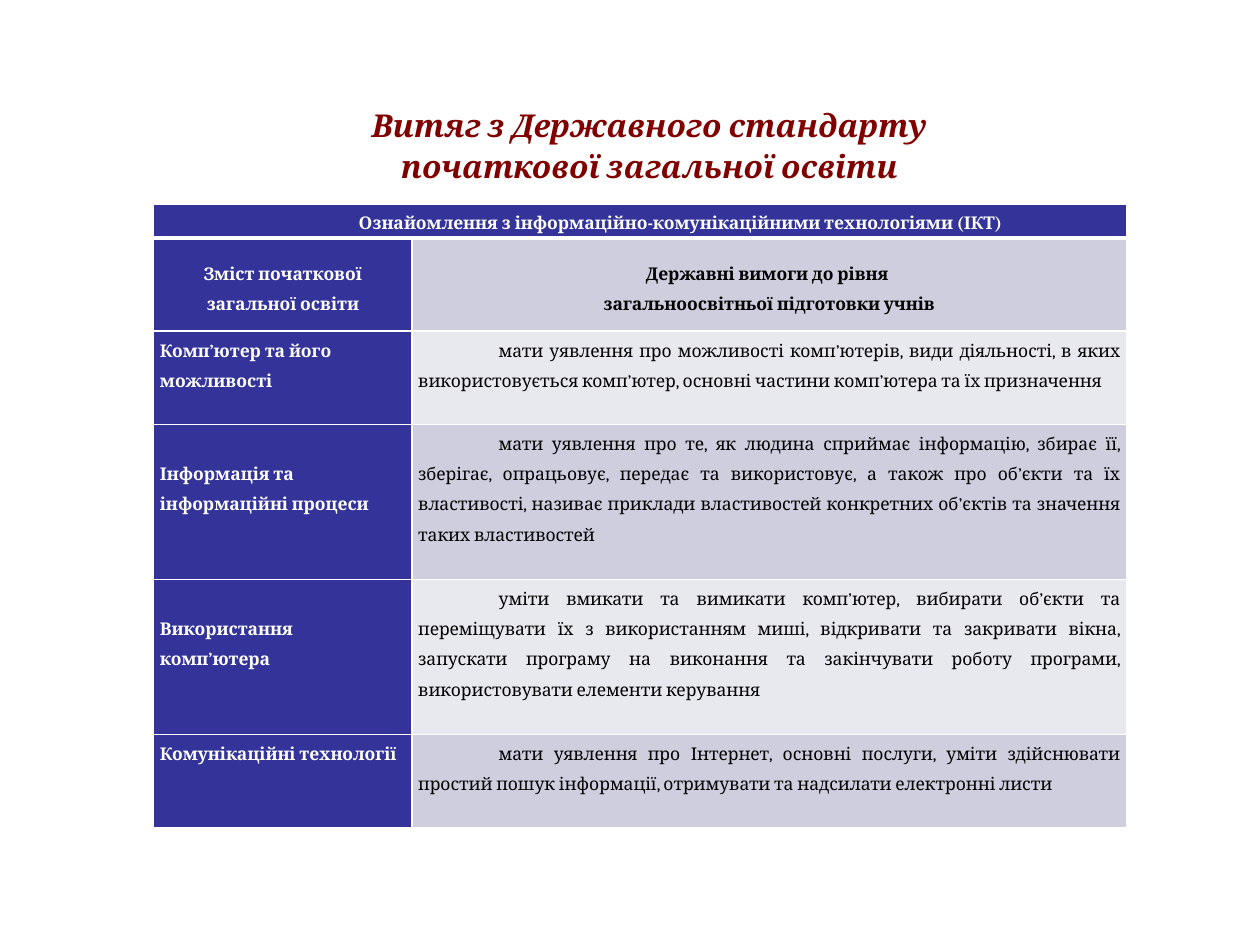
from pptx import Presentation
from pptx.dml.color import RGBColor as RGB
from pptx.enum.text import MSO_ANCHOR as ANCHOR, PP_ALIGN as ALIGN
from pptx.oxml import parse_xml
from pptx.oxml.ns import nsdecls
from pptx.util import Pt

TITLE = "Витяг з Державного стандарту початкової загальної освіти"
BANNER = "Ознайомлення з інформаційно-комунікаційними технологіями (ІКТ)"
HEADINGS = ("Зміст початкової загальної освіти",
            "Державні вимоги до рівня \vзагальноосвітньої підготовки учнів")
# topic, requirement, lines the topic is lowered by
TOPICS = [
    ("Комп’ютер та його можливості",
     "мати уявлення про можливості комп’ютерів, види діяльності, в яких "
     "використовується комп’ютер, основні частини комп’ютера та їх призначення", 0),
    ("Інформація та інформаційні процеси",
     "мати уявлення про те, як людина сприймає інформацію, збирає її, зберігає, "
     "опрацьовує, передає та використовує, а також про об’єкти та їх властивості, "
     "називає приклади властивостей конкретних об’єктів та значення таких властивостей", 1),
    ("Використання комп’ютера",
     "уміти вмикати та вимикати комп’ютер, вибирати об’єкти та переміщувати їх з "
     "використанням миші, відкривати та закривати вікна, запускати програму на "
     "виконання та закінчувати роботу програми, використовувати елементи керування", 1),
    ("Комунікаційні технології",
     "мати уявлення про Інтернет, основні послуги, уміти здійснювати простий пошук "
     "інформації, отримувати та надсилати електронні листи", 0),
]

THEME = dict(font="Cambria", title_size=18, body_size=10, title="800000",
             head="333399", bands=("CECEDE", "E8E8EF"), light="FFFFFF", dark="000000")

TITLE_BOX = (172.8, 54.7, 396.7, 55.4)
TABLE_LEFT, TABLE_TOP = 87.8, 116.6
COLUMNS = (147.6, 408.2)
BANNER_ROW, SHORT_ROW, TALL_ROW = 19.4, 53.3, 88.6
ROWS = (BANNER_ROW, SHORT_ROW, SHORT_ROW, TALL_ROW, TALL_ROW, SHORT_ROW)
SIDE_MARGIN, INDENT, LINE = 3.6, 46, 17.1


def write(tf, text, size, color, align, spacing, bold=True, italic=False, indent=0):
    tf.word_wrap = True
    p = tf.paragraphs[0]
    p.text = text
    p.alignment, p.line_spacing = align, spacing
    if indent:
        pPr = p._p.get_or_add_pPr()
        pPr.set("marL", "0")
        pPr.set("indent", str(Pt(indent)))
    f = p.font
    f.name, f.size, f.bold, f.italic = THEME["font"], Pt(size), bold, italic
    f.color.rgb = RGB.from_string(color)


def add_borders(cell, bottom):
    """Draw light lines of 1 pt round a cell, with its own width at the bottom."""
    tcPr = cell._tc.get_or_add_tcPr()
    for i, (side, width) in enumerate(zip("LRTB", (1, 1, 1, bottom))):
        tcPr.insert(i, parse_xml(
            f'<a:ln{side} {nsdecls("a")} w="{Pt(width)}"><a:solidFill>'
            f'<a:srgbClr val="{THEME["light"]}"/></a:solidFill></a:ln{side}>'))


def fill_cell(cell, text, fill, color, align, anchor=ANCHOR.TOP, top=0, bottom=1, **style):
    cell.margin_left = cell.margin_right = Pt(SIDE_MARGIN)
    cell.margin_top, cell.margin_bottom = Pt(top), Pt(0)
    cell.vertical_anchor = anchor
    cell.fill.solid()
    cell.fill.fore_color.rgb = RGB.from_string(fill)
    add_borders(cell, bottom)
    write(cell.text_frame, text, THEME["body_size"], color, align, 1.5, **style)


def main():
    prs = Presentation()
    prs.slide_width, prs.slide_height = Pt(720), Pt(540)
    slide = prs.slides.add_slide(prs.slide_layouts[6])

    box = slide.shapes.add_textbox(*map(Pt, TITLE_BOX))
    write(box.text_frame, TITLE, THEME["title_size"], THEME["title"],
          ALIGN.CENTER, 1.1, italic=True)

    table = slide.shapes.add_table(len(ROWS), len(COLUMNS), Pt(TABLE_LEFT), Pt(TABLE_TOP),
                                   Pt(sum(COLUMNS)), Pt(sum(ROWS))).table
    for column, width in zip(table.columns, COLUMNS):
        column.width = Pt(width)
    for row, height in zip(table.rows, ROWS):
        row.height = Pt(height)

    head, light, dark, bands = (THEME[k] for k in ("head", "light", "dark", "bands"))
    table.cell(0, 0).merge(table.cell(0, 1))
    fill_cell(table.cell(0, 0), BANNER, head, light, ALIGN.CENTER, bottom=3, indent=INDENT)
    for c, (fill, color) in enumerate(((head, light), (bands[0], dark))):
        fill_cell(table.cell(1, c), HEADINGS[c], fill, color, ALIGN.CENTER, ANCHOR.MIDDLE)
    for r, (topic, requirement, lowered) in enumerate(TOPICS, 2):
        fill_cell(table.cell(r, 0), topic, head, light, ALIGN.LEFT, top=lowered * LINE)
        fill_cell(table.cell(r, 1), requirement, bands[(r - 1) % 2], dark, ALIGN.JUSTIFY,
                  bold=False, indent=INDENT)

    prs.save("out.pptx")


if __name__ == "__main__":
    main()
